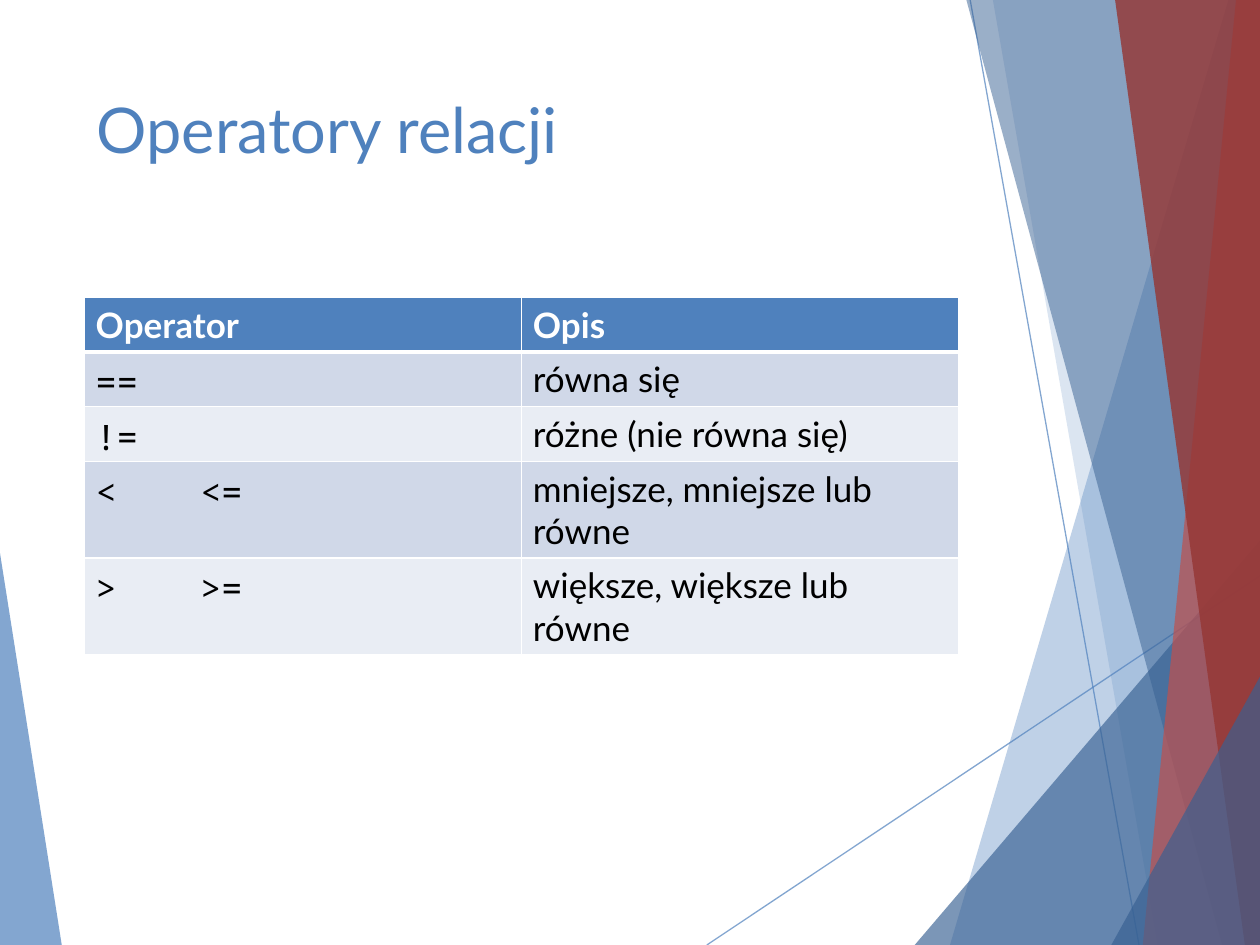
from typing import NamedTuple

from lxml import etree
from pptx import Presentation
from pptx.dml.color import RGBColor
from pptx.enum.shapes import MSO_CONNECTOR
from pptx.enum.text import MSO_ANCHOR
from pptx.oxml.ns import qn
from pptx.util import Inches, Pt

STRAIGHT = MSO_CONNECTOR.STRAIGHT
TOP = MSO_ANCHOR.TOP
WIDE, HIGH = 10, 7.5
BLUE, NAVY, RED, WINE = "4F81BD", "376092", "C0504D", "953735"
WHITE, BLACK = "FFFFFF", "000000"
BANDS = ["D0D8E8", "E9EDF4"]
SANS, MONO = "Lato", "Noto Sans Mono"


class Shard(NamedTuple):
    points: list[tuple[float, float]]
    color: str
    alpha: int


class Ray(NamedTuple):
    start: tuple[float, float]
    end: tuple[float, float]


class Entry(NamedTuple):
    sign: str
    note: str


EDGE = Shard([(0, 4.39), (0.49, HIGH), (0, HIGH)], BLUE, 70)
RAYS = [Ray((5.61, HIGH), (WIDE, 4.57)), Ray((7.7, 0), (9.04, HIGH))]
SHARDS = [
    Shard([(9.75, 0), (7.54, HIGH), (WIDE, HIGH), (WIDE, 0)], BLUE, 36),
    Shard([(7.88, 0), (9.19, HIGH), (WIDE, HIGH), (WIDE, 0)], BLUE, 20),
    Shard([(7.26, HIGH), (WIDE, 4.29), (WIDE, HIGH)], NAVY, 66),
    Shard([(7.67, 0), (9.7, HIGH), (WIDE, HIGH), (WIDE, 0)], NAVY, 50),
    Shard([(9.81, 0), (9.07, HIGH), (WIDE, HIGH), (WIDE, 0)], RED, 70),
    Shard([(8.85, 0), (9.88, HIGH), (WIDE, HIGH), (WIDE, 0)], WINE, 82),
    Shard([(8.82, HIGH), (WIDE, 5.37), (WIDE, HIGH)], NAVY, 66),
]
HEAD = Entry("Operator", "Opis")
ENTRIES = [
    Entry("==", "równa się"),
    Entry("!=", "różne (nie równa się)"),
    Entry("<\t<=", "mniejsze, mniejsze lub równe"),
    Entry(">\t>=", "większe, większe lub równe"),
]


def paint(target, color: str, alpha: int = 100) -> None:
    """Give a fill or line format a solid colour with an opacity in percent."""
    fill = getattr(target, "fill", target)
    fill.solid()
    fill.fore_color.rgb = RGBColor.from_string(color)
    if alpha < 100:
        tone = fill._xPr.find(qn("a:solidFill"))[0]
        etree.SubElement(tone, qn("a:alpha"), val=str(alpha * 1000))


def write(frame, text: str, *, size: float = 20, font: str = SANS,
          color: str = BLACK, bold: bool = False, tab: float = 0) -> None:
    """Write one formatted paragraph, with an optional tab stop in inches."""
    frame.word_wrap = True
    para = frame.paragraphs[0]
    run = para.add_run()
    run.text = text
    run.font.size = Pt(size)
    run.font.name = font
    run.font.bold = bold
    run.font.color.rgb = RGBColor.from_string(color)
    if tab:
        stops = etree.SubElement(para._p.get_or_add_pPr(), qn("a:tabLst"))
        etree.SubElement(stops, qn("a:tab"), pos=str(Inches(tab)), algn="l")


def draw_shard(slide, shard: Shard) -> None:
    """Draw a translucent polygon without an outline."""
    first, *rest = [(Inches(x), Inches(y)) for x, y in shard.points]
    pen = slide.shapes.build_freeform(*first)
    pen.add_line_segments(rest, close=True)
    shape = pen.convert_to_shape()
    shape.shadow.inherit = False
    shape.line.fill.background()
    paint(shape, shard.color, shard.alpha)


def draw_ray(slide, ray: Ray) -> None:
    """Draw a thin translucent line."""
    ends = [Inches(n) for n in ray.start + ray.end]
    link = slide.shapes.add_connector(STRAIGHT, *ends)
    link.line.width = Pt(0.75)
    paint(link.line, BLUE, 70)
    etree.SubElement(link._element.spPr, qn("a:effectLst"))


def set_rims(cell, top: float, base: float) -> None:
    """Put white borders around a cell, ahead of its fill."""
    props = cell._tc.get_or_add_tcPr()
    rims = [("L", 1), ("R", 1), ("T", top), ("B", base)]
    for spot, (side, width) in enumerate(rims):
        rim = etree.Element(qn(f"a:ln{side}"), w=str(Pt(width)))
        fill = etree.SubElement(rim, qn("a:solidFill"))
        etree.SubElement(fill, qn("a:srgbClr"), val=WHITE)
        props.insert(spot, rim)


def draw_table(slide) -> None:
    """Draw the table of operators with its header and banded rows."""
    rows = [HEAD, *ENTRIES]
    grid = slide.shapes.add_table(
        len(rows), 2, Inches(0.67), Inches(2.36), Inches(6.94),
        Inches(0.41 * len(rows))).table
    for i, entry in enumerate(rows):
        head = i == 0
        for j, text in enumerate(entry):
            cell = grid.cell(i, j)
            cell.margin_left = cell.margin_right = Inches(0.09)
            cell.margin_top = cell.margin_bottom = Inches(0.05)
            paint(cell, BLUE if head else BANDS[(i - 1) % 2])
            set_rims(cell, 3 if i == 1 else 1, 3 if head else 1)
            write(cell.text_frame, text, bold=head,
                  color=WHITE if head else BLACK,
                  font=SANS if head or j else MONO,
                  tab=0.83 if "\t" in text else 0)


def main() -> None:
    """Build the slide and save it."""
    deck = Presentation()
    deck.slide_width, deck.slide_height = Inches(WIDE), Inches(HIGH)
    slide = deck.slides.add_slide(deck.slide_layouts[6])
    draw_shard(slide, EDGE)
    for ray in RAYS:
        draw_ray(slide, ray)
    for shard in SHARDS:
        draw_shard(slide, shard)
    title = slide.shapes.add_textbox(
        Inches(0.67), Inches(0.67), Inches(6.94), Inches(1.44))
    title.text_frame.vertical_anchor = TOP
    write(title.text_frame, "Operatory relacji", size=36, color=BLUE)
    draw_table(slide)
    deck.save("out.pptx")


if __name__ == "__main__":
    main()
